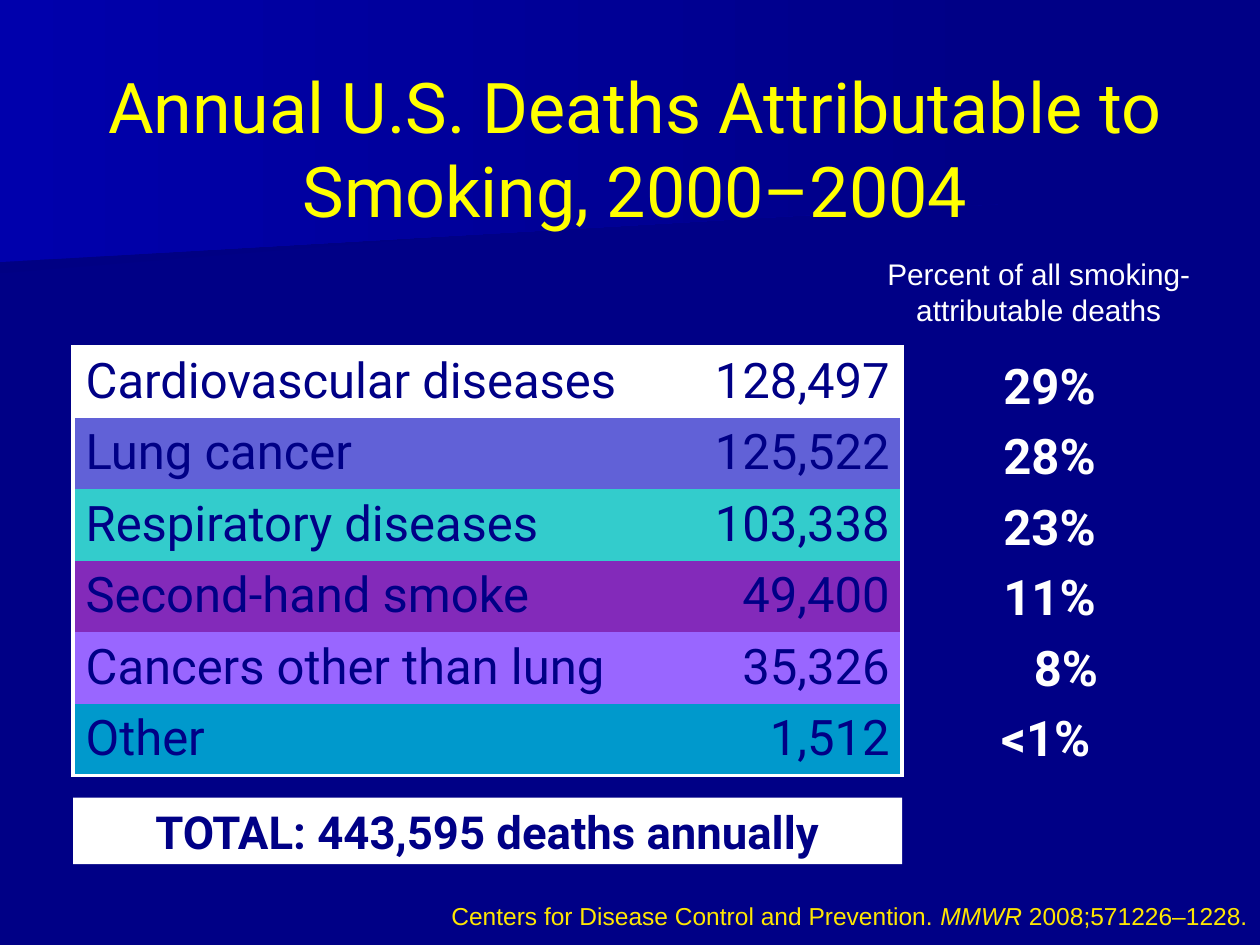
from dataclasses import dataclass

from lxml import etree
from pptx import Presentation
from pptx.dml.color import RGBColor
from pptx.enum.shapes import MSO_SHAPE
from pptx.enum.text import MSO_ANCHOR, PP_ALIGN
from pptx.oxml.ns import qn
from pptx.util import Inches, Pt

LEFT, CENTER, RIGHT = PP_ALIGN.LEFT, PP_ALIGN.CENTER, PP_ALIGN.RIGHT
TOP, BOTTOM = MSO_ANCHOR.TOP, MSO_ANCHOR.BOTTOM
RECTANGLE = MSO_SHAPE.RECTANGLE


@dataclass(frozen=True)
class Theme:
    navy: str = "000086"
    deep_navy: str = "000083"
    blue: str = "0000AC"
    yellow: str = "FFFF00"
    gold: str = "FFE701"
    white: str = "FFFFFF"
    heading_font: str = "Roboto"
    body_font: str = "Arial"
    title_size: int = 40
    table_size: int = 28
    total_size: int = 26
    label_size: int = 17
    source_size: int = 14
    border_width: float = 2.25


THEME = Theme()

# Cause, deaths, row colour, share of deaths, centre of the share text
CAUSES = [
    ("Cardiovascular diseases", "128,497", THEME.white, "29%", 8.33),
    ("Lung cancer", "125,522", "6161D7", "28%", 8.33),
    ("Respiratory diseases", "103,338", "33CCCC", "23%", 8.33),
    ("Second-hand smoke", "49,400", "832ABA", "11%", 8.33),
    ("Cancers other than lung", "35,326", "9966FF", "8%", 8.46),
    ("Other", "1,512", "0099CC", "<1%", 8.3),
]


def color(value):
    return RGBColor.from_string(value)


def write(frame, runs, font_format, align=LEFT, anchor=TOP, wrap=True):
    """Fill a text frame with one paragraph of (text, italic) runs."""
    frame.word_wrap = wrap
    frame.vertical_anchor = anchor
    paragraph = frame.paragraphs[0]
    paragraph.alignment = align
    for text, italic in runs:
        run = paragraph.add_run()
        run.text = text
        for name, value in {**font_format, "italic": italic}.items():
            if name == "color":
                run.font.color.rgb = color(value)
            else:
                setattr(run.font, name, value)


def font_format(name, size, text_color, bold=False):
    return {"name": name, "size": Pt(size), "color": text_color, "bold": bold}


def add_text(slide, box, runs, text_format, **layout):
    shape = slide.shapes.add_textbox(*map(Inches, box))
    write(shape.text_frame, runs, text_format, **layout)


def add_gradient_panel(slide, points, start, end):
    corners = [(Inches(x), Inches(y)) for x, y in points]
    builder = slide.shapes.build_freeform(*corners[0])
    builder.add_line_segments(corners[1:], close=True)
    panel = builder.convert_to_shape()
    panel.shadow.inherit = False
    panel.line.fill.background()
    panel.fill.gradient()
    panel.fill.gradient_angle = 0
    for stop, value in zip(panel.fill.gradient_stops, (start, end)):
        stop.color.rgb = color(value)


def add_background(slide):
    slide.background.fill.solid()
    slide.background.fill.fore_color.rgb = color(THEME.navy)
    add_gradient_panel(slide, [(7.78, 1.53), (0, 2.17), (0, 1.01), (7.79, 1.01)],
                       THEME.deep_navy, THEME.navy)
    add_gradient_panel(slide, [(7.92, 1.62), (0, 2.08), (0, 0), (7.92, 0)],
                       THEME.blue, THEME.navy)


def set_borders(cell, visible):
    """Draw the named sides and clear the others."""
    properties = cell._tc.get_or_add_tcPr()
    for side in "LRTB":
        line = etree.SubElement(properties, qn(f"a:ln{side}"),
                                w=str(Pt(THEME.border_width)))
        if side in visible:
            fill = etree.SubElement(line, qn("a:solidFill"))
            etree.SubElement(fill, qn("a:srgbClr"), val=THEME.white)
        else:
            etree.SubElement(line, qn("a:noFill"))


def add_causes_table(slide, box):
    left, top, width, height = box
    table = slide.shapes.add_table(len(CAUSES), 2, *map(Inches, box)).table
    table.first_row = table.horz_banding = False
    number_width = 1.93
    for column, column_width in zip(table.columns, (width - number_width, number_width)):
        column.width = Inches(column_width)
    text_format = font_format(THEME.heading_font, THEME.table_size, THEME.navy)
    last = len(CAUSES) - 1
    for index, (cause, deaths, row_color, *_) in enumerate(CAUSES):
        table.rows[index].height = Inches(height / len(CAUSES))
        ends = ("T" if index == 0 else "") + ("B" if index == last else "")
        columns = ((cause, LEFT, "L"), (deaths, RIGHT, "R"))
        for cell, (text, align, side) in zip(table.rows[index].cells, columns):
            set_borders(cell, side + ends)
            cell.fill.solid()
            cell.fill.fore_color.rgb = color(row_color)
            write(cell.text_frame, [(text, False)], text_format, align)


def add_shares(slide, top, step):
    text_format = font_format(THEME.heading_font, THEME.table_size, THEME.white, True)
    width = 1.16
    for index, (*_, share, center) in enumerate(CAUSES):
        box = (center - width / 2, top + index * step, width, 0.57)
        add_text(slide, box, [(share, False)], text_format, align=CENTER, wrap=False)


def add_total(slide, box):
    shape = slide.shapes.add_shape(RECTANGLE, *map(Inches, box))
    shape.shadow.inherit = False
    shape.fill.solid()
    shape.fill.fore_color.rgb = color(THEME.white)
    shape.line.fill.background()
    write(shape.text_frame, [("TOTAL: 443,595 deaths annually", False)],
          font_format(THEME.heading_font, THEME.total_size, THEME.navy, True), CENTER)


def build_slide(presentation):
    slide = presentation.slides.add_slide(presentation.slide_layouts[6])
    add_background(slide)
    # Title
    add_text(slide, (0.33, 0.39, 9.42, 1.5),
             [("Annual U.S. Deaths Attributable to Smoking, 2000–2004", False)],
             font_format(THEME.heading_font, THEME.title_size, THEME.yellow),
             align=CENTER, anchor=BOTTOM)
    # Source
    add_text(slide, (1.57, 7.1, 8.43, 0.33),
             [("Centers for Disease Control and Prevention. ", False),
              ("MMWR ", True), ("2008;571226–1228.", False)],
             font_format(THEME.body_font, THEME.source_size, THEME.gold), align=RIGHT)
    # Deaths by cause, with shares beside the table
    add_shares(slide, 2.77, 0.56)
    add_total(slide, (0.58, 6.33, 6.58, 0.53))
    add_causes_table(slide, (0.58, 2.75, 6.58, 3.4))
    add_text(slide, (6.9, 1.98, 2.69, 0.67),
             [("Percent of all smoking-attributable deaths", False)],
             font_format(THEME.body_font, THEME.label_size, THEME.white), align=CENTER)


def main():
    presentation = Presentation()
    presentation.slide_width = Inches(10)
    presentation.slide_height = Inches(7.5)
    build_slide(presentation)
    presentation.save("out.pptx")


if __name__ == "__main__":
    main()
